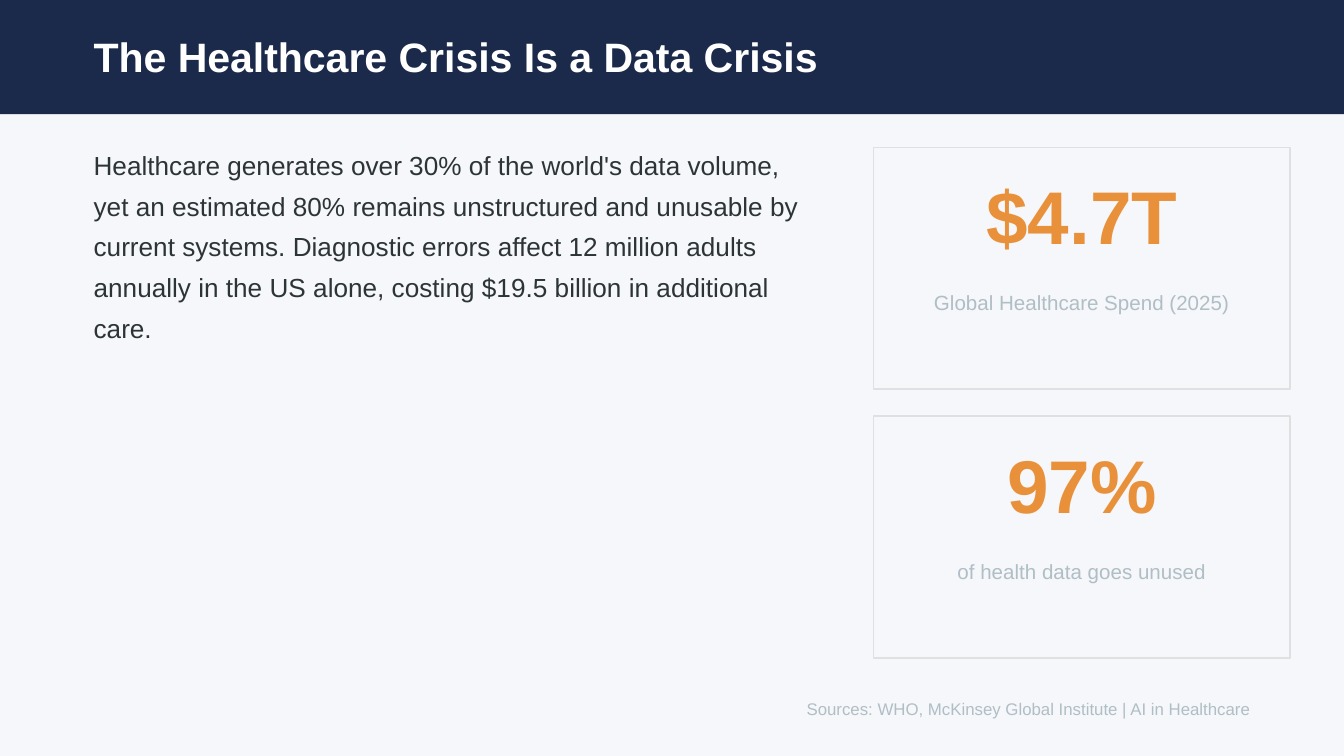
import pptx
import pptx.dml.color
import pptx.enum.shapes
import pptx.enum.text
import pptx.util

Cm = pptx.util.Cm
RGBColor = pptx.dml.color.RGBColor
ALIGN = pptx.enum.text.PP_ALIGN
RECTANGLE = pptx.enum.shapes.MSO_SHAPE.RECTANGLE

NAVY = RGBColor(0x1B, 0x2A, 0x4A)
PALE = RGBColor(0xF5, 0xF7, 0xFA)
WHITE = RGBColor(0xFF, 0xFF, 0xFF)
CHARCOAL = RGBColor(0x2D, 0x34, 0x36)
ORANGE = RGBColor(0xE8, 0x91, 0x3A)
MUTED = RGBColor(0xB0, 0xBE, 0xC5)
BORDER = RGBColor(0xE0, 0xE0, 0xE0)

MARGIN = 1.52
CONTENT_WIDTH = 22.35
CONTENT_TOP = 2.79
CARD_LEFT = 16.51
CARD_WIDTH = 7.87
CARD_HEIGHT = 4.57
CARD_PITCH = 5.08

deck = pptx.Presentation()
deck.slide_width = Cm(25.4)
deck.slide_height = Cm(14.29)
slide = deck.slides.add_slide(deck.slide_layouts[6])
slide.background.fill.solid()
slide.background.fill.fore_color.rgb = PALE


def add_panel(left, top, width, height, fill, border=None):
    panel = slide.shapes.add_shape(RECTANGLE, Cm(left), Cm(top), Cm(width), Cm(height))
    panel.shadow.inherit = False
    panel.fill.solid()
    panel.fill.fore_color.rgb = fill
    if border is None:
        panel.line.fill.background()
    else:
        panel.line.color.rgb = border
        panel.line.width = pptx.util.Pt(1)


def add_text(left, top, width, height, text, size, color,
             bold=False, align=ALIGN.LEFT, spacing=None):
    box = slide.shapes.add_textbox(Cm(left), Cm(top), Cm(width), Cm(height))
    frame = box.text_frame
    frame.word_wrap = True
    frame.vertical_anchor = pptx.enum.text.MSO_ANCHOR.MIDDLE
    paragraph = frame.paragraphs[0]
    paragraph.alignment = align
    paragraph.line_spacing = spacing
    run = paragraph.add_run()
    run.text = text
    run.font.name = "Arial"
    run.font.size = pptx.util.Pt(size)
    run.font.bold = bold
    run.font.color.rgb = color


add_panel(0, 0, 25.4, 2.16, NAVY)
add_text(MARGIN, 0.3, CONTENT_WIDTH, 1.52,
         "The Healthcare Crisis Is a Data Crisis", 22, WHITE, bold=True)

add_text(MARGIN, CONTENT_TOP, 13.97, 3.56,
         "Healthcare generates over 30% of the world's data volume, yet an estimated "
         "80% remains unstructured and unusable by current systems. Diagnostic errors "
         "affect 12 million adults annually in the US alone, costing $19.5 billion in "
         "additional care.", 14, CHARCOAL, spacing=1.3)

statistics = [
    ("$4.7T", "Global Healthcare Spend (2025)"),
    ("97%", "of health data goes unused"),
]
for index, (figure, caption) in enumerate(statistics):
    card_top = CONTENT_TOP + index * CARD_PITCH
    add_panel(CARD_LEFT, card_top, CARD_WIDTH, CARD_HEIGHT, PALE, BORDER)
    add_text(CARD_LEFT, card_top + 0.25, CARD_WIDTH, 2.03,
             figure, 40, ORANGE, bold=True, align=ALIGN.CENTER)
    add_text(CARD_LEFT, card_top + 2.29, CARD_WIDTH, 1.27,
             caption, 11, MUTED, align=ALIGN.CENTER)

add_text(MARGIN, 13.08, CONTENT_WIDTH, 0.64,
         "Sources: WHO, McKinsey Global Institute | AI in Healthcare",
         9, MUTED, align=ALIGN.RIGHT)

deck.save("out.pptx")
